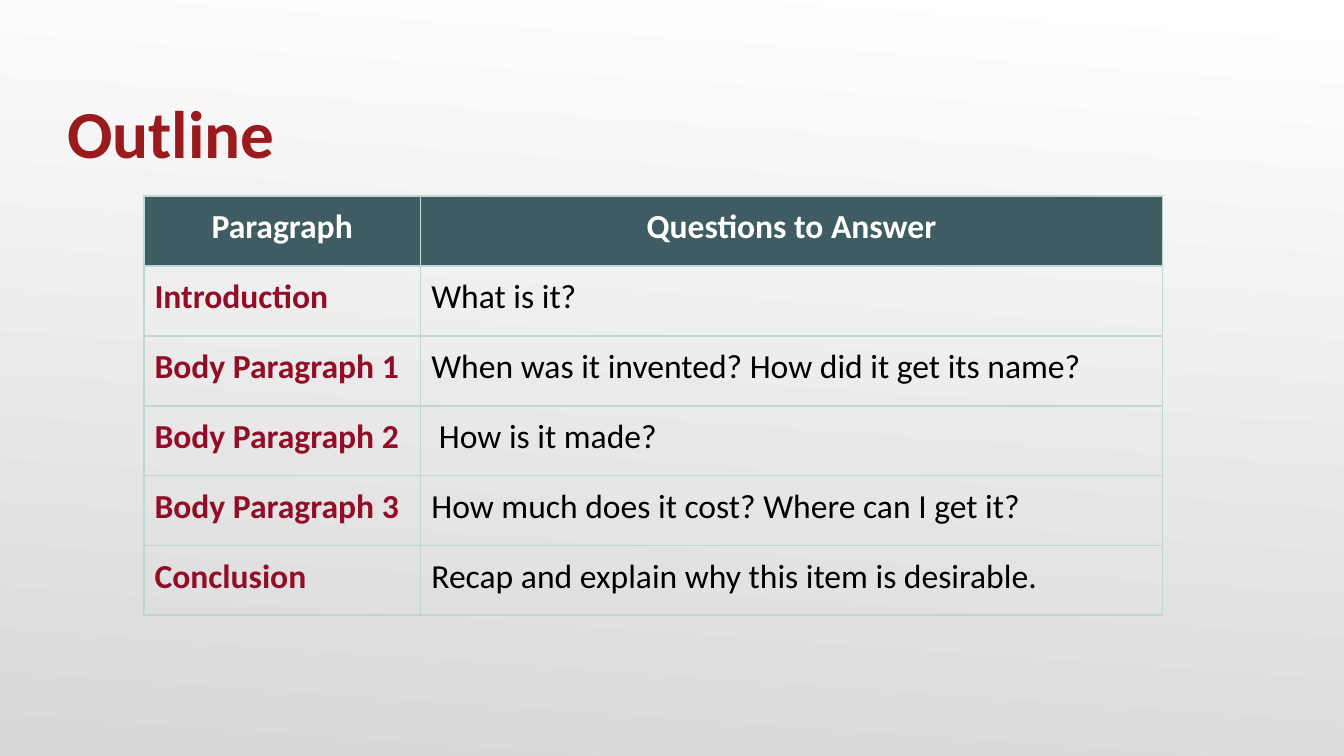
from typing import NamedTuple

from lxml import etree
from pptx import Presentation
from pptx import util as u
from pptx.dml.color import RGBColor
from pptx.enum import text
from pptx.oxml import ns

FONT = "Calibri"
LINE = "BED7D3"
WIDE = 10
HIGH = WIDE * 9 / 16
WIDTHS = (2.06, 5.52)
ROW = 0.52
PAD = 0.08


class Look(NamedTuple):
    size: float
    color: str
    bold: bool


TITLE = Look(36, "991B1E", True)
HEAD = Look(18, "FFFFFF", True)
LABEL = Look(18, "910D28", True)
BODY = Look(18, "000000", False)


class Row(NamedTuple):
    part: str
    asks: str


ROWS = (
    Row("Paragraph", "Questions to Answer"),
    Row("Introduction", "What is it?"),
    Row("Body Paragraph 1", "When was it invented? How did it get its name?"),
    Row("Body Paragraph 2", " How is it made?"),
    Row("Body Paragraph 3", "How much does it cost? Where can I get it?"),
    Row("Conclusion", "Recap and explain why this item is desirable."),
)


def tint(color: str) -> RGBColor:
    return RGBColor.from_string(color)


def write(frame, words: str, look: Look, align=text.PP_ALIGN.LEFT) -> None:
    para = frame.paragraphs[0]
    para.text = words
    para.alignment = align
    font = para.font
    font.name = FONT
    font.size = u.Pt(look.size)
    font.bold = look.bold
    font.color.rgb = tint(look.color)


def edge(cell) -> None:
    props = cell._tc.get_or_add_tcPr()
    for spot, side in enumerate(("lnL", "lnR", "lnT", "lnB")):
        line = etree.Element(ns.qn(f"a:{side}"), w=str(u.Pt(1)))
        fill = etree.SubElement(line, ns.qn("a:solidFill"))
        etree.SubElement(fill, ns.qn("a:srgbClr"), val=LINE)
        props.insert(spot, line)


def paint(slide) -> None:
    fill = slide.background.fill
    fill.gradient()
    fill.gradient_angle = 266
    for stop, color in zip(fill.gradient_stops, ("FFFFFF", "D8D8D8")):
        stop.color.rgb = tint(color)


def title(slide, words: str) -> None:
    box = slide.shapes.add_textbox(
        u.Inches(0.5), u.Inches(0.34), u.Inches(1.94), u.Inches(0.94)
    )
    frame = box.text_frame
    frame.word_wrap = True
    frame.vertical_anchor = text.MSO_ANCHOR.BOTTOM
    frame.margin_left = frame.margin_right = frame.margin_bottom = 0
    frame.margin_top = u.Inches(0.05)
    write(frame, words, TITLE)


def grid(slide, rows: tuple[Row, ...]) -> None:
    table = slide.shapes.add_table(
        len(rows), len(WIDTHS), u.Inches(1.07), u.Inches(1.46),
        u.Inches(sum(WIDTHS)), u.Inches(ROW * len(rows)),
    ).table
    table.horz_banding = False
    for col, width in zip(table.columns, WIDTHS):
        col.width = u.Inches(width)
    for r, row in enumerate(rows):
        table.rows[r].height = u.Inches(ROW)
        for c, words in enumerate(row):
            cell = table.cell(r, c)
            cell.margin_left = cell.margin_right = u.Inches(PAD)
            cell.margin_top = cell.margin_bottom = u.Inches(PAD)
            if r == 0:
                cell.fill.solid()
                cell.fill.fore_color.rgb = tint("3E5C61")
                write(cell.text_frame, words, HEAD, text.PP_ALIGN.CENTER)
            else:
                cell.fill.background()
                write(cell.text_frame, words, BODY if c else LABEL)
            edge(cell)


def main() -> None:
    deck = Presentation()
    deck.slide_width = u.Inches(WIDE)
    deck.slide_height = u.Inches(HIGH)
    slide = deck.slides.add_slide(deck.slide_layouts[6])
    paint(slide)
    title(slide, "Outline")
    grid(slide, ROWS)
    deck.save("out.pptx")


if __name__ == "__main__":
    main()
